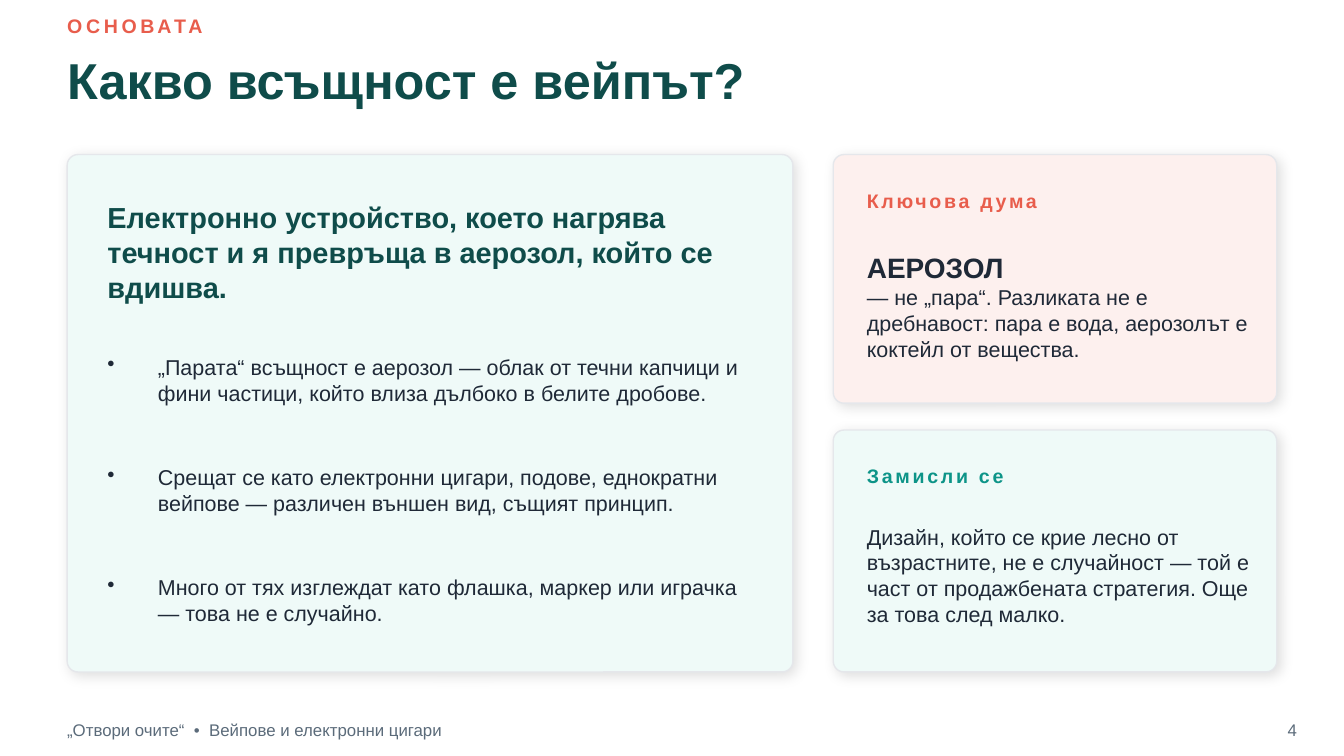
from lxml import etree
from pptx import Presentation
from pptx.dml.color import RGBColor
from pptx.enum.shapes import MSO_SHAPE
from pptx.enum.text import MSO_ANCHOR, MSO_AUTO_SIZE, PP_ALIGN
from pptx.oxml.ns import qn
from pptx.util import Inches, Pt

ROUNDED = MSO_SHAPE.ROUNDED_RECTANGLE
MIDDLE = MSO_ANCHOR.MIDDLE
NO_FIT = MSO_AUTO_SIZE.NONE
LEFT, RIGHT = PP_ALIGN.LEFT, PP_ALIGN.RIGHT
TITLE_ONLY = 5

CELL = Inches(0.1)
COLUMNS, ROWS = 100, 56.25
MARGIN = 5
CARD_TOP = 11.5
CARD_BOTTOM = 50
SIDE_LEFT = 62
SIDE_WIDTH = 33
SIDE_GAP = 2
KEY_HEIGHT = 18.5
THINK_TOP = CARD_TOP + KEY_HEIGHT + SIDE_GAP
CORNER = 0.8
FOOTER_TOP = 52.8
BULLET_TOP = 24.5
BULLET_STEP = 8.2

COLORS = {
    "coral": "E85D4C",
    "pine": "0F4C4A",
    "teal": "0D9488",
    "ink": "1F2937",
    "slate": "5B6B7A",
    "mint": "EFFAF8",
    "blush": "FDF0EE",
    "border": "E5E7EB",
    "shadow": "000000",
}

FORMATS = {
    "kicker": {"size": 10.5, "bold": True, "color": "coral", "spacing": 2},
    "title": {"size": 27, "bold": True, "color": "pine"},
    "lead": {"size": 15.5, "bold": True, "color": "pine"},
    "body": {"size": 11.5, "bold": False, "color": "ink"},
    "keyword": {"size": 15, "bold": True, "color": "ink"},
    "key label": {"size": 10.5, "bold": True, "color": "coral", "spacing": 1.5},
    "think label": {"size": 10.5, "bold": True, "color": "teal", "spacing": 1.5},
    "footer": {"size": 9, "bold": False, "color": "slate"},
}

BULLETS = [
    "„Парата“ всъщност е аерозол — облак от течни капчици и фини частици, "
    "който влиза дълбоко в белите дробове.",
    "Срещат се като електронни цигари, подове, еднократни вейпове — "
    "различен външен вид, същият принцип.",
    "Много от тях изглеждат като флашка, маркер или играчка — това не е случайно.",
]


def grid(*cells):
    return [round(cell * CELL) for cell in cells]


def rgb(name):
    return RGBColor.from_string(COLORS[name])


def format_span(span, style):
    values = FORMATS[style]
    font_values = {"name": "Arial", "size": Pt(values["size"]), "bold": values["bold"]}
    for attribute, value in font_values.items():
        setattr(span.font, attribute, value)
    span.font.color.rgb = rgb(values["color"])
    if "spacing" in values:
        span.font._element.set("spc", str(int(values["spacing"] * 100)))


def fill_text(box, lines, align=LEFT):
    frame = box.text_frame
    frame_values = {
        "word_wrap": True, "auto_size": NO_FIT, "vertical_anchor": MIDDLE,
        "margin_left": 0, "margin_top": 0, "margin_right": 0, "margin_bottom": 0,
    }
    for attribute, value in frame_values.items():
        setattr(frame, attribute, value)
    for index, (text, style) in enumerate(lines):
        para = frame.add_paragraph() if index else frame.paragraphs[0]
        para.alignment = align
        span = para.add_run()
        span.text = text
        format_span(span, style)


def add_text(page, place, *lines, align=LEFT):
    box = page.shapes.add_textbox(*grid(*place))
    fill_text(box, lines, align)
    return box


def add_title(page, place, text):
    title = page.shapes.title
    for attribute, value in zip(("left", "top", "width", "height"), grid(*place)):
        setattr(title, attribute, value)
    fill_text(title, [(text, "title")])


def add_bullet(page, place, text):
    box = add_text(page, place, (text, "body"))
    indent = Pt(27)
    properties = box.text_frame.paragraphs[0]._p.get_or_add_pPr()
    properties.set("marL", str(indent))
    properties.set("indent", str(-indent))
    etree.SubElement(properties, qn("a:buSzPct"), val="100000")
    etree.SubElement(properties, qn("a:buChar"), char="•")


def add_shadow(shape):
    shape.shadow.inherit = False
    effects = shape._element.spPr.find(qn("a:effectLst"))
    shadow = etree.SubElement(
        effects, qn("a:outerShdw"), blurRad=str(Pt(7)), dist=str(Pt(2)),
        dir=str(45 * 60000), algn="bl", rotWithShape="0")
    color = etree.SubElement(shadow, qn("a:srgbClr"), val=COLORS["shadow"])
    etree.SubElement(color, qn("a:alpha"), val="13000")


def add_card(page, place, fill):
    card = page.shapes.add_shape(ROUNDED, *grid(*place))
    card.adjustments[0] = CORNER / min(place[2:])
    card.fill.solid()
    card.fill.fore_color.rgb = rgb(fill)
    card.line.color.rgb = rgb("border")
    card.line.width = Pt(0.75)
    add_shadow(card)


def add_side_card(page, top, height, fill, label, text_height, *lines):
    add_card(page, (SIDE_LEFT, top, SIDE_WIDTH, height), fill)
    text_left = SIDE_LEFT + 2.5
    add_text(page, (text_left, top + 2, 29, 2.8), label)
    add_text(page, (text_left, top + 5.3, 29, text_height), *lines)


def add_main_card(page):
    add_card(page, (MARGIN, CARD_TOP, 54, CARD_BOTTOM - CARD_TOP), "mint")
    text_left = MARGIN + 3
    add_text(page, (text_left, 14, 48, 9.5),
             ("Електронно устройство, което нагрява течност и я превръща "
              "в аерозол, който се вдишва.", "lead"))
    for row, text in enumerate(BULLETS):
        add_bullet(page, (text_left, BULLET_TOP + row * BULLET_STEP, 48, 7.5), text)


def main():
    deck = Presentation()
    deck.slide_width, deck.slide_height = grid(COLUMNS, ROWS)
    page = deck.slides.add_slide(deck.slide_layouts[TITLE_ONLY])

    add_text(page, (MARGIN, 0.6, 90, 2.6), ("ОСНОВАТА", "kicker"))
    add_title(page, (MARGIN, 2.8, 90, 6.2), "Какво всъщност е вейпът?")
    add_main_card(page)
    add_side_card(
        page, CARD_TOP, KEY_HEIGHT, "blush", ("Ключова дума", "key label"), 12,
        ("АЕРОЗОЛ", "keyword"),
        ("— не „пара“. Разликата не е дребнавост: пара е вода, "
         "аерозолът е коктейл от вещества.", "body"))
    add_side_card(
        page, THINK_TOP, CARD_BOTTOM - THINK_TOP, "mint",
        ("Замисли се", "think label"), 11,
        ("Дизайн, който се крие лесно от възрастните, не е случайност — той е "
         "част от продажбената стратегия. Още за това след малко.", "body"))
    add_text(page, (MARGIN, FOOTER_TOP, 60, 3),
             ("„Отвори очите“  •  Вейпове и електронни цигари", "footer"))
    add_text(page, (93, FOOTER_TOP, 3.5, 3), ("4", "footer"), align=RIGHT)

    deck.save("out.pptx")


if __name__ == "__main__":
    main()
